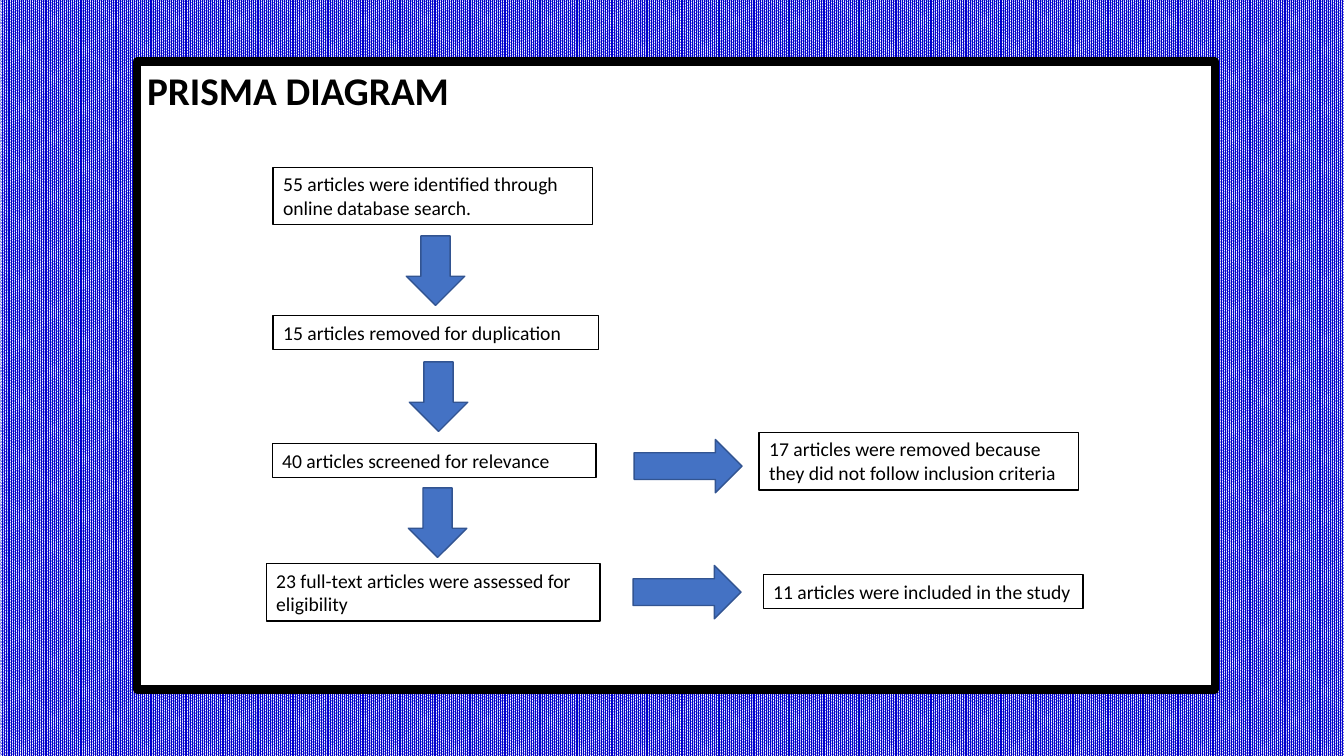
from dataclasses import dataclass

from pptx import Presentation
from pptx import util as u
from pptx.dml.color import RGBColor as Rgb
from pptx.enum import dml, shapes, text

PX = u.Inches(1) // 100
KIND = shapes.MSO_SHAPE


@dataclass(frozen=True)
class Theme:
    font: str = "Calibri"
    head: int = 28
    body: int = 14
    ink: Rgb = Rgb(0, 0, 0)
    paper: Rgb = Rgb(255, 255, 255)
    back: Rgb = Rgb(0, 0, 0xCC)
    arrow: Rgb = Rgb(0x44, 0x72, 0xC4)
    edge: Rgb = Rgb(0x32, 0x54, 0x91)


THEME = Theme()

STEPS = [
    (135, 105, 317, 57, "55 articles were identified through online database search."),
    (135, 252, 323, 34, "15 articles removed for duplication"),
    (134, 379, 321, 34, "40 articles screened for relevance"),
    (617, 368, 317, 57, "17 articles were removed because they did not follow inclusion criteria"),
    (128, 498, 331, 57, "23 full-text articles were assessed for eligibility"),
    (621, 509, 317, 34, "11 articles were included in the study"),
]
DOWN = [(267, 173), (270, 298), (269, 423)]
RIGHT = [(493, 375), (492, 500)]


def shape(slide, kind, box, fill, line, width):
    item = slide.shapes.add_shape(kind, *(n * PX for n in box))
    item.shadow.inherit = False
    if fill is None:
        item.fill.background()
    else:
        item.fill.solid()
        item.fill.fore_color.rgb = fill
    item.line.color.rgb = line
    item.line.width = u.Pt(width)
    return item


def write(item, words, size, bold=False):
    frame = item.text_frame
    frame.word_wrap = True
    frame.vertical_anchor = text.MSO_ANCHOR.TOP
    para = frame.paragraphs[0]
    para.alignment = text.PP_ALIGN.LEFT
    run = para.add_run()
    run.text = words
    run.font.name = THEME.font
    run.font.size = u.Pt(size)
    run.font.bold = bold
    run.font.color.rgb = THEME.ink


def backdrop(slide):
    fill = slide.background.fill
    fill.patterned()
    fill.pattern = dml.MSO_PATTERN.PERCENT_90
    fill.fore_color.rgb = THEME.back
    fill.back_color.rgb = THEME.paper


def panel(slide, box):
    item = shape(slide, KIND.RECTANGLE, box, THEME.paper, THEME.ink, 6)
    write(item, "PRISMA DIAGRAM", THEME.head, True)


def steps(slide, box):
    left, top = box[:2]
    for x, y, wide, high, words in STEPS:
        place = (left + x, top + y, wide, high)
        item = shape(slide, KIND.RECTANGLE, place, None, THEME.ink, 1)
        write(item, words, THEME.body)
        item.text_frame.auto_size = text.MSO_AUTO_SIZE.SHAPE_TO_FIT_TEXT


def arrows(slide, box):
    left, top = box[:2]
    groups = [(KIND.DOWN_ARROW, DOWN, 58, 69), (KIND.RIGHT_ARROW, RIGHT, 107, 53)]
    for kind, spots, wide, high in groups:
        for x, y in spots:
            place = (left + x, top + y, wide, high)
            shape(slide, kind, place, THEME.arrow, THEME.edge, 1)


def main():
    deck = Presentation()
    deck.slide_width, deck.slide_height = 1333 * PX, 750 * PX
    slide = deck.slides.add_slide(deck.slide_layouts[6])
    box = (136, 61, 1069, 623)
    backdrop(slide)
    panel(slide, box)
    steps(slide, box)
    arrows(slide, box)
    deck.save("out.pptx")


if __name__ == "__main__":
    main()
